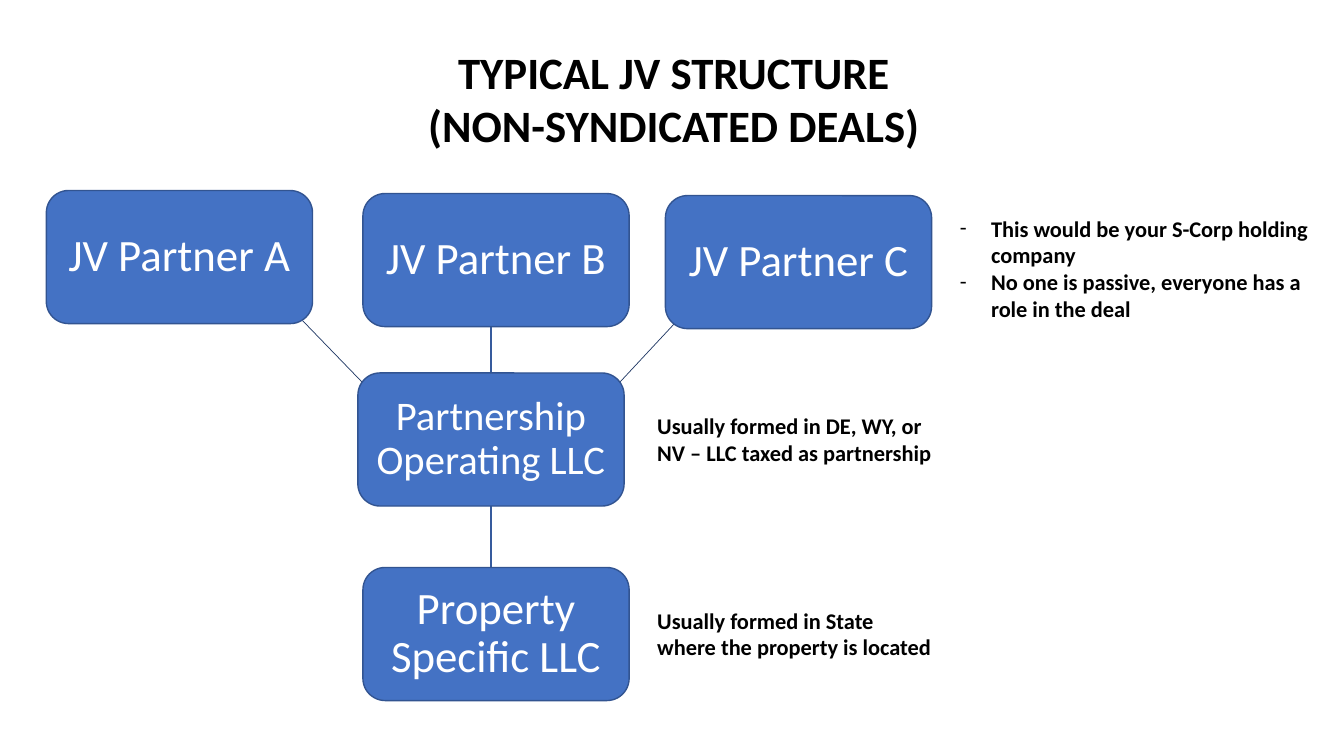
from lxml.etree import SubElement
from pptx import Presentation
from pptx.dml.color import RGBColor
from pptx.enum.shapes import MSO_CONNECTOR, MSO_SHAPE
from pptx.enum.text import MSO_ANCHOR, MSO_AUTO_SIZE, PP_ALIGN
from pptx.oxml.ns import qn
from pptx.util import Inches, Pt

COLORS = {"box": "4472C4", "border": "325491", "trunk": "365B9D",
          "branch": "203864", "light": "FFFFFF", "dark": "000000"}
FONT = "Calibri"
BOX_WIDTH, BOX_HEIGHT = 2.64, 1.32
TRUNK_X = 4.87


def color(name):
    return RGBColor.from_string(COLORS[name])


def place(shape, left, top, width, height):
    shape.left, shape.top = Inches(left), Inches(top)
    shape.width, shape.height = Inches(width), Inches(height)


def write(frame, lines, size, ink, bold=False, align=PP_ALIGN.LEFT,
          anchor=MSO_ANCHOR.TOP, spacing=1.0):
    frame.word_wrap = True
    frame.auto_size = MSO_AUTO_SIZE.NONE
    frame.vertical_anchor = anchor
    for index, line in enumerate(lines):
        para = frame.paragraphs[0] if index == 0 else frame.add_paragraph()
        para.text = line
        para.alignment = align
        para.line_spacing = spacing
        para.space_before = Pt(0)
        font = para.font
        font.name, font.size, font.bold = FONT, Pt(size), bold
        font.color.rgb = color(ink)


def add_title(page, box, lines):
    title = page.shapes.title
    place(title, *box)
    write(title.text_frame, lines, 32, "dark", True, PP_ALIGN.CENTER)


def add_dash_list(page, box, items):
    body = page.placeholders[1]
    place(body, *box)
    write(body.text_frame, items, 16, "dark", True)
    for para in body.text_frame.paragraphs:
        properties = para._p.get_or_add_pPr()
        properties.set("marL", str(Inches(0.31)))
        properties.set("indent", str(Inches(-0.31)))
        SubElement(properties, qn("a:buFont")).set("typeface", FONT)
        SubElement(properties, qn("a:buChar")).set("char", "-")


def add_note(page, box, lines):
    note = page.shapes.add_textbox(*map(Inches, box))
    write(note.text_frame, lines, 16, "dark", True)


def add_link(page, start, end, ink, weight):
    link = page.shapes.add_connector(
        MSO_CONNECTOR.STRAIGHT, *map(Inches, start + end))
    link.line.color.rgb = color(ink)
    link.line.width = Pt(weight)
    SubElement(link._element.spPr, qn("a:effectLst"))


def add_entity(page, left, top, label, size=32):
    entity = page.shapes.add_shape(
        MSO_SHAPE.ROUNDED_RECTANGLE, Inches(left), Inches(top),
        Inches(BOX_WIDTH), Inches(BOX_HEIGHT))
    entity.shadow.inherit = False
    entity.fill.solid()
    entity.fill.fore_color.rgb = color("box")
    entity.line.color.rgb = color("border")
    entity.line.width = Pt(1)
    frame = entity.text_frame
    frame.margin_left = frame.margin_right = Inches(0.05)
    write(frame, [label], size, "light", align=PP_ALIGN.CENTER,
          anchor=MSO_ANCHOR.MIDDLE, spacing=0.9)


def add_structure(page):
    # Links lie behind the boxes
    add_link(page, (TRUNK_X, 3.24), (TRUNK_X, 5.63), "trunk", 1)
    add_link(page, (3, 3.18), (3.6, 3.8), "branch", 0.5)
    add_link(page, (6.69, 3.21), (6.14, 3.8), "branch", 0.5)

    # Partners, then the companies below them
    add_entity(page, 0.46, 1.89, "JV Partner A")
    add_entity(page, 3.6, 1.92, "JV Partner B")
    add_entity(page, 6.6, 1.94, "JV Partner C")
    add_entity(page, 3.55, 3.7, "Partnership Operating LLC", 29)
    add_entity(page, 3.6, 5.63, "Property Specific LLC")


def main():
    deck = Presentation()
    deck.slide_width, deck.slide_height = Inches(13.33), Inches(7.5)
    page = deck.slides.add_slide(deck.slide_layouts[1])

    add_title(page, (0.02, 0.39, 13.33, 1.18),
              ["TYPICAL JV STRUCTURE", "(NON-SYNDICATED DEALS)"])
    add_structure(page)

    # Remarks beside the levels
    add_dash_list(page, (9.42, 2.08, 3.91, 1.18),
                  ["This would be your S-Corp holding company",
                   "No one is passive, everyone has a role in the deal"])
    add_note(page, (6.42, 4.04, 3.65, 0.64),
             ["Usually formed in DE, WY, or", "NV – LLC taxed as partnership"])
    add_note(page, (6.42, 5.97, 3.65, 0.64),
             ["Usually formed in State", "where the property is located"])
    deck.save("out.pptx")


if __name__ == "__main__":
    main()
